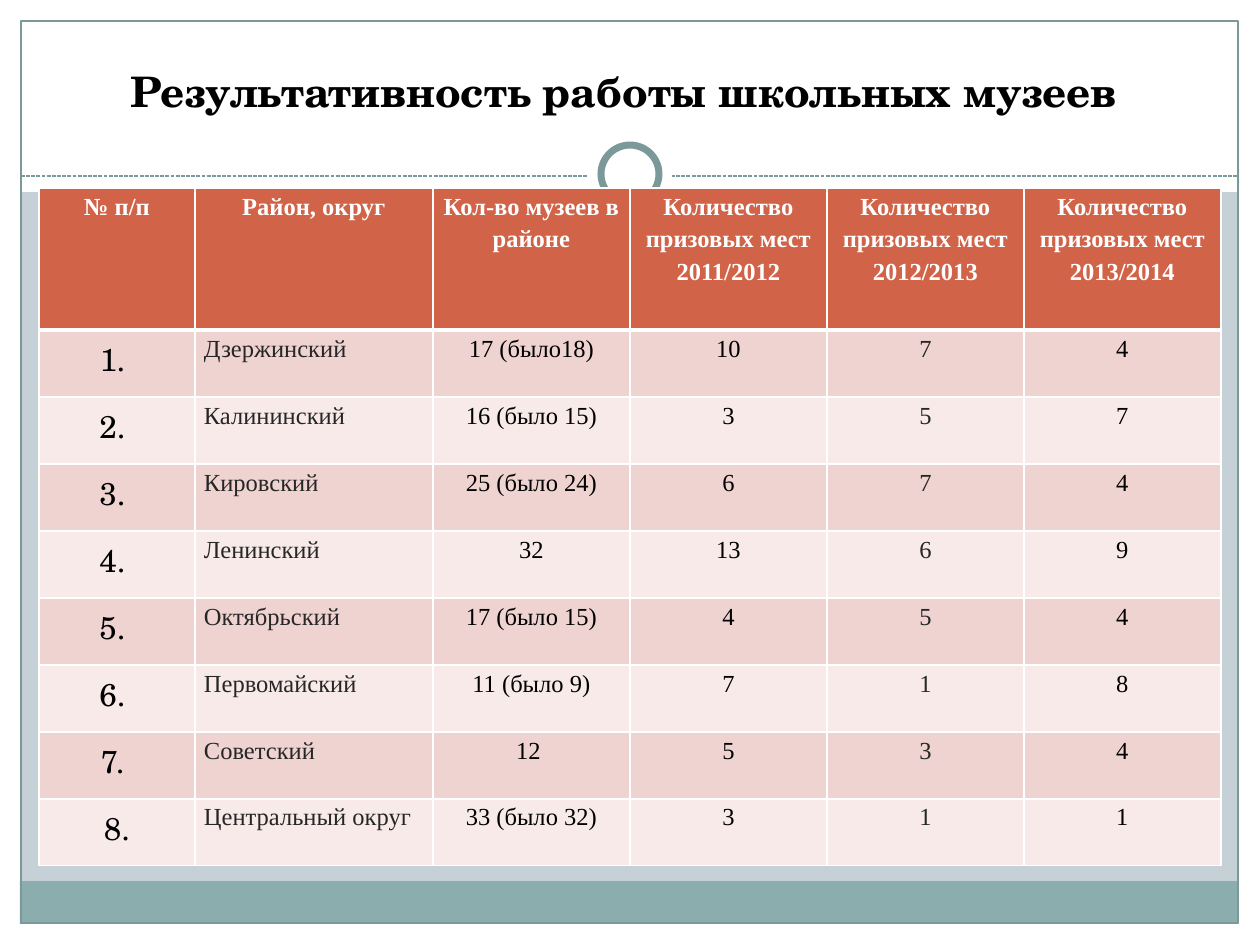
"""Build the slide on the results of school museums as a table by district."""
import lxml.etree
import pptx
import pptx.dml.color
import pptx.enum.dml
import pptx.enum.shapes
import pptx.enum.text
import pptx.oxml.ns
import pptx.util

PX = 914400 / 126
SERIF, TIMES = "TeX Gyre Schola", "Times New Roman"
HUES = {"back": "C5D1D7", "white": "FFFFFF", "band": "8CADAE", "frame": "7C999A",
        "head": "D16349", "odd": "EED3D0", "even": "F7EAE9", "black": "000000", "gray": "262626"}
RGB = {name: pptx.dml.color.RGBColor.from_string(code) for name, code in HUES.items()}
ALIGN = pptx.enum.text.PP_ALIGN
KIND = pptx.enum.shapes.MSO_SHAPE
qn = pptx.oxml.ns.qn


def emu(*sizes):
    return [pptx.util.Emu(round(size * PX)) for size in sizes]


def style(frame, font, size, hue, bold, align, space):
    for para in frame.paragraphs:
        para.alignment = align
        para.line_spacing = space
        for run in para.runs:
            run.font.name = font
            run.font.size = pptx.util.Pt(size)
            run.font.bold = bold
            run.font.color.rgb = RGB[hue]


deck = pptx.Presentation()
deck.slide_width, deck.slide_height = emu(1260, 945)
slide = deck.slides.add_slide(deck.slide_layouts[6])
slide.background.fill.solid()
slide.background.fill.fore_color.rgb = RGB["back"]

parts = [
    (KIND.RECTANGLE, (0, 924, 1260, 21), "white", 0),
    (KIND.RECTANGLE, (0, 0, 1260, 192), "white", 0),
    (KIND.RECTANGLE, (0, 0, 21, 945), "white", 0),
    (KIND.RECTANGLE, (1239, 0, 21, 945), "white", 0),
    (KIND.RECTANGLE, (20, 881, 1218, 43), "band", 0),
    (KIND.RECTANGLE, (21, 21, 1217, 902), None, 0.75),
    (None, (21, 176, 1238, 176), None, 0.75),
    (KIND.OVAL, (588, 132, 84, 84), "white", 0),
    (KIND.OVAL, (601, 145, 58, 58), "white", 4),
]
for kind, box, fill, width in parts:
    if kind is None:
        shape = slide.shapes.add_connector(pptx.enum.shapes.MSO_CONNECTOR.STRAIGHT, *emu(*box))
        shape.line.dash_style = pptx.enum.dml.MSO_LINE.SQUARE_DOT
        lxml.etree.SubElement(shape.element.spPr, qn("a:effectLst"))
    else:
        shape = slide.shapes.add_shape(kind, *emu(*box))
        shape.shadow.inherit = False
        if fill:
            shape.fill.solid()
            shape.fill.fore_color.rgb = RGB[fill]
        else:
            shape.fill.background()
    if width:
        shape.line.color.rgb = RGB["frame"]
        shape.line.width = pptx.util.Pt(width)
    else:
        shape.line.fill.background()

prize = "Количество призовых мест\n"
rows = [
    ["№ п/п", "Район, округ", "Кол-во музеев в районе"]
    + [prize + year for year in ("2011/2012", "2012/2013", "2013/2014")],
    ["1. ", "Дзержинский", "17 (было18)", "10", "7", "4"],
    ["2. ", "Калининский", "16 (было 15)", "3", "5", "7"],
    ["3. ", "Кировский", "25 (было 24)", "6", "7", "4"],
    ["4. ", "Ленинский", "32", "13", "6", "9"],
    ["5. ", "Октябрьский", "17 (было 15)", "4", "5", "4"],
    ["6. ", "Первомайский", "11 (было 9)", "7", "1", "8"],
    ["7. ", "Советский", "12 ", "5", "3", "4"],
    ["8.", "Центральный округ", "33 (было 32)", "3", "1", "1"],
]
widths = [156, 238] + [197] * 4
heights = [142] + [67] * 8
area = emu(39, 188, sum(widths), sum(heights))
table = slide.shapes.add_table(len(rows), len(widths), *area).table
for col, width in zip(table.columns, emu(*widths)):
    col.width = width
for row, height in zip(table.rows, emu(*heights)):
    row.height = height

for r, row in enumerate(rows):
    for c, text in enumerate(row):
        cell = table.cell(r, c)
        cell.text_frame.text = text
        if r and c == 0:
            style(cell.text_frame, SERIF, 18, "black", False, ALIGN.CENTER, 1.0)
        else:
            cell.margin_left, cell.margin_right, cell.margin_top, cell.margin_bottom = emu(9, 9, 0, 0)
            hue = "white" if r == 0 else "gray" if c in (1, 4) else "black"
            align = ALIGN.LEFT if r and c == 1 else ALIGN.CENTER
            style(cell.text_frame, TIMES, 14, hue, r == 0, align, 1.2)
        props = cell._tc.get_or_add_tcPr()
        for side in "LRTB":
            thick = (r == 0 and side == "B") or (r == 1 and side == "T")
            line = lxml.etree.SubElement(props, qn("a:ln" + side), w=str(pptx.util.Pt(3 if thick else 1)))
            solid = lxml.etree.SubElement(line, qn("a:solidFill"))
            lxml.etree.SubElement(solid, qn("a:srgbClr"), val=HUES["white"])
        cell.fill.solid()
        cell.fill.fore_color.rgb = RGB["head" if r == 0 else "odd" if r % 2 else "even"]

title = slide.shapes.add_textbox(*emu(118, 59, 1033, 63)).text_frame
title.word_wrap = True
title.text = "Результативность работы школьных музеев"
style(title, SERIF, 24, "black", True, ALIGN.LEFT, 1.0)

deck.save("out.pptx")
